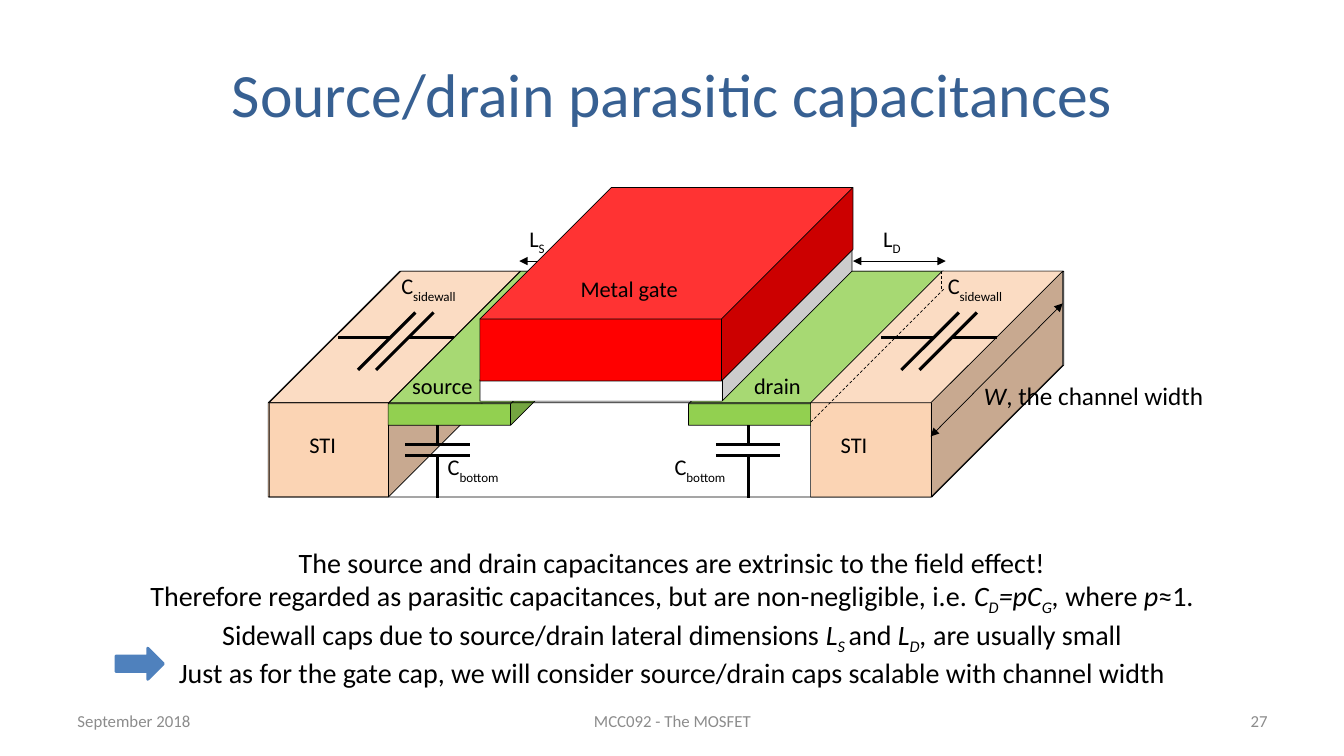
from dataclasses import dataclass

from lxml import etree
from pptx import Presentation
from pptx.dml.color import RGBColor
from pptx.enum.dml import MSO_LINE
from pptx.enum.shapes import MSO_CONNECTOR, MSO_SHAPE
from pptx.enum.text import MSO_ANCHOR, PP_ALIGN
from pptx.oxml.ns import qn
from pptx.util import Inches, Pt

CUBE, ARROW = MSO_SHAPE.CUBE, MSO_SHAPE.RIGHT_ARROW
STRAIGHT, DASH = MSO_CONNECTOR.STRAIGHT, MSO_LINE.DASH
LEFT, CENTER, RIGHT = PP_ALIGN.LEFT, PP_ALIGN.CENTER, PP_ALIGN.RIGHT
TOP, MIDDLE = MSO_ANCHOR.TOP, MSO_ANCHOR.MIDDLE


@dataclass(frozen=True)
class Theme:
    font: str = "Calibri"
    ink: str = "000000"
    title: str = "376092"
    footer: str = "8C8C8C"
    isolation: str = "FBD4B4"
    doped: str = "92D050"
    oxide: str = "FFFFFF"
    gate: str = "FF0000"
    pointer: str = "4F81BD"
    title_size: int = 44
    body_size: int = 20
    width_size: int = 18
    label_size: int = 16
    footer_size: int = 12
    thin: float = 0.5
    measure: float = 0.75
    plate: float = 2.25


THEME = Theme()


@dataclass
class Region:
    """A box on the slide; its parts are placed from its top left corner."""
    slide: object
    left: float
    top: float

    def place(self, x, y):
        return Inches(self.left + x), Inches(self.top + y)

    def text(self, x, y, width, height, lines, size, color=THEME.ink, align=LEFT,
             anchor=TOP, side_inset=0.1, sub=-30):
        """Each line is a list of (text, style); style holds i (italic), s (subscript)."""
        frame = self.slide.shapes.add_textbox(
            *self.place(x, y), Inches(width), Inches(height)).text_frame
        frame.word_wrap = True
        frame.vertical_anchor = anchor
        frame.margin_left = frame.margin_right = Inches(side_inset)
        for number, line in enumerate(lines):
            paragraph = frame.add_paragraph() if number else frame.paragraphs[0]
            paragraph.alignment = align
            paragraph.font.name = THEME.font
            paragraph.font.size = Pt(size)
            paragraph.font.color.rgb = RGBColor.from_string(color)
            for words, style in line:
                run = paragraph.add_run()
                run.text = words
                if "i" in style:
                    run.font.italic = True
                if "s" in style:
                    run._r.get_or_add_rPr().set("baseline", str(sub * 1000))

    def label(self, x, y, words, sub=""):
        line = [(words, "")] + ([(sub, "s")] if sub else [])
        self.text(x, y, 1.78, 0.66, [line], THEME.label_size,
                  side_inset=0 if sub else 0.1)

    def solid(self, kind, x, y, width, height, fill, line=THEME.ink,
              weight=THEME.thin, depth=None):
        shape = self.slide.shapes.add_shape(
            kind, *self.place(x, y), Inches(width), Inches(height))
        shape.shadow.inherit = False
        if fill:
            shape.fill.solid()
            shape.fill.fore_color.rgb = RGBColor.from_string(fill)
        else:
            shape.fill.background()
        shape.line.color.rgb = RGBColor.from_string(line)
        shape.line.width = Pt(weight)
        if depth is not None:
            shape.adjustments[0] = depth

    def line(self, x1, y1, x2, y2, weight, arrows=False, dashed=False):
        connector = self.slide.shapes.add_connector(
            STRAIGHT, *self.place(x1, y1), *self.place(x2, y2))
        connector.line.color.rgb = RGBColor.from_string(THEME.ink)
        connector.line.width = Pt(weight)
        if dashed:
            connector.line.dash_style = DASH
        if arrows:
            for end in ("a:headEnd", "a:tailEnd"):
                etree.SubElement(connector.line._get_or_add_ln(), qn(end), type="triangle")
        etree.SubElement(connector._element.spPr, qn("a:effectLst"))


def sidewall_capacitor(slide, left, top):
    box = Region(slide, left, top)
    for x in (0.2, 0.38):
        box.line(x, 0.32, x + 0.57, -0.25, THEME.plate)
    for start, end in ((0, 0.53), (0.71, 1.15)):
        box.line(start, 0, end, 0, THEME.plate)


def bottom_capacitor(slide, left, top):
    box = Region(slide, left, top)
    for y in (0.19, 0.3):
        box.line(0, y, 0.64, y, THEME.plate)
    for start, end in ((0, 0.19), (0.3, 0.72)):
        box.line(0.32, start, 0.32, end, THEME.plate)


def transistor(slide, left, top):
    box = Region(slide, left, top)
    surface = 0.83

    # Source length lies behind the gate
    box.line(2.49, 0.73, 3.41, 0.73, THEME.measure, arrows=True)

    # Blocks from back to front
    box.solid(CUBE, 0, surface, 2.5, 2.24, THEME.isolation, depth=0.583)
    for x in (1.19, 4.17):
        box.solid(CUBE, x, surface, 2.53, 1.53, THEME.doped, depth=0.86)
    box.solid(CUBE, 0.01, surface, 7.88, 2.24, None, depth=0.583)
    box.solid(CUBE, 2.1, 0.62, 3.69, 1.5, THEME.oxide, depth=0.86)
    box.label(2.59, 0.32, "L", "S")
    box.label(1.33, 1.78, "source")
    box.solid(CUBE, 2.1, 0, 3.7, 1.92, THEME.gate, depth=0.68)
    box.solid(CUBE, 5.38, surface, 2.5, 2.24, THEME.isolation, depth=0.583)

    # Drain length, channel width and hidden drain edge
    box.line(5.8, 0.73, 6.72, 0.73, THEME.measure, arrows=True)
    box.line(7.88, 1.15, 6.57, 2.47, THEME.thin, arrows=True)
    box.line(6.7, 1.01, 5.38, 2.33, THEME.thin, dashed=True)
    box.line(6.68, surface, 6.68, 1.01, THEME.thin, dashed=True)

    # Capacitors
    for x in (0.69, 6.08):
        sidewall_capacitor(slide, left + x, top + 1.49)
    for x in (1.36, 4.44):
        bottom_capacitor(slide, left + x, top + 2.36)

    # Labels
    for x, y, words, sub in (
            (6.1, 0.32, "L", "D"), (4.72, 1.78, "drain", ""),
            (0.31, 2.37, "STI", ""), (5.58, 2.37, "STI", ""),
            (1.32, 0.79, "C", "sidewall"), (6.74, 0.79, "C", "sidewall"),
            (1.78, 2.59, "C", "bottom"), (4.03, 2.59, "C", "bottom"),
            (3, 0.82, "Metal gate", "")):
        box.label(x, y, words, sub)
    box.text(7, 1.86, 2.75, 0.66, [[("W", "i"), (", the channel width", "")]],
             THEME.width_size)


def conclusions(slide, left, top):
    box = Region(slide, left, top)
    lines = [
        [("The source and drain capacitances are extrinsic to the field effect!", "")],
        [("Therefore regarded as parasitic capacitances, but are non-negligible, i.e. ", ""),
         ("C", "i"), ("D", "is"), ("=pC", "i"), ("G", "is"), (", ", "i"),
         ("where", ""), (" p", "i"), ("≈1.", "")],
        [("Sidewall caps due to source/drain lateral dimensions ", ""),
         ("L", "i"), ("S ", "is"), ("and", ""), (" L", "i"), ("D", "is"),
         (", ", "i"), ("are usually small", "")],
        [("Just as for the gate cap, we will consider source/drain caps scalable "
          "with channel width", "")],
    ]
    box.text(0, 0, 11.65, 1.46, lines, THEME.body_size, align=CENTER, sub=-25)
    box.solid(ARROW, 0.31, 1.07, 0.47, 0.31, THEME.pointer, THEME.pointer, 2)


def heading(slide, left, top):
    Region(slide, left, top).text(
        0, 0, 9, 1.25, [[("Source/drain parasitic capacitances", "")]],
        THEME.title_size, THEME.title, CENTER, MIDDLE)


def footer(slide, left, top):
    box = Region(slide, left, top)
    for x, width, words, align in ((0, 3.11, "September 2018", LEFT),
                                   (3.89, 4.22, "MCC092 - The MOSFET", CENTER),
                                   (8.89, 3.11, "27", RIGHT)):
        box.text(x, 0, width, 0.4, [[(words, "")]], THEME.footer_size,
                 THEME.footer, align, MIDDLE)


def main():
    deck = Presentation()
    deck.slide_width, deck.slide_height = Inches(13.33), Inches(7.5)
    slide = deck.slides.add_slide(deck.slide_layouts[6])
    heading(slide, 2.17, 0.3)
    transistor(slide, 2.66, 1.86)
    conclusions(slide, 0.84, 5.36)
    footer(slide, 0.67, 6.95)
    deck.save("out.pptx")


if __name__ == "__main__":
    main()
